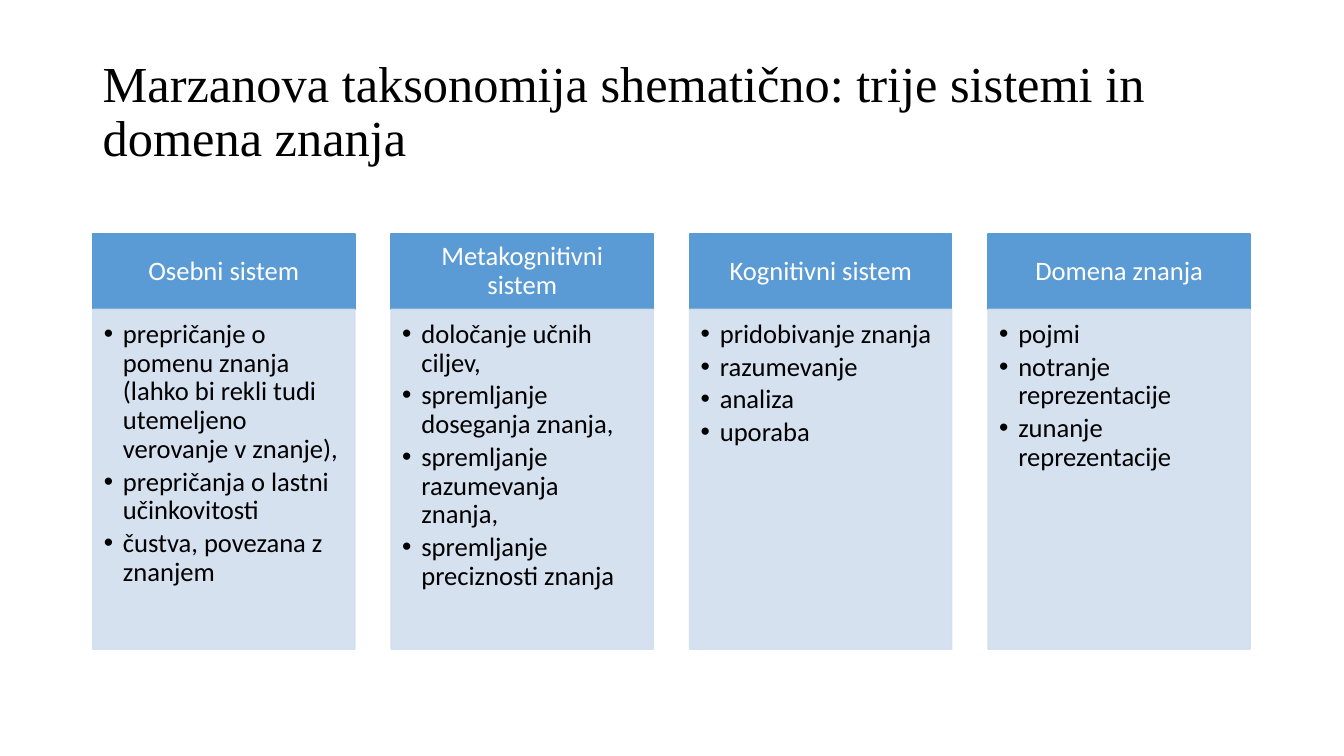
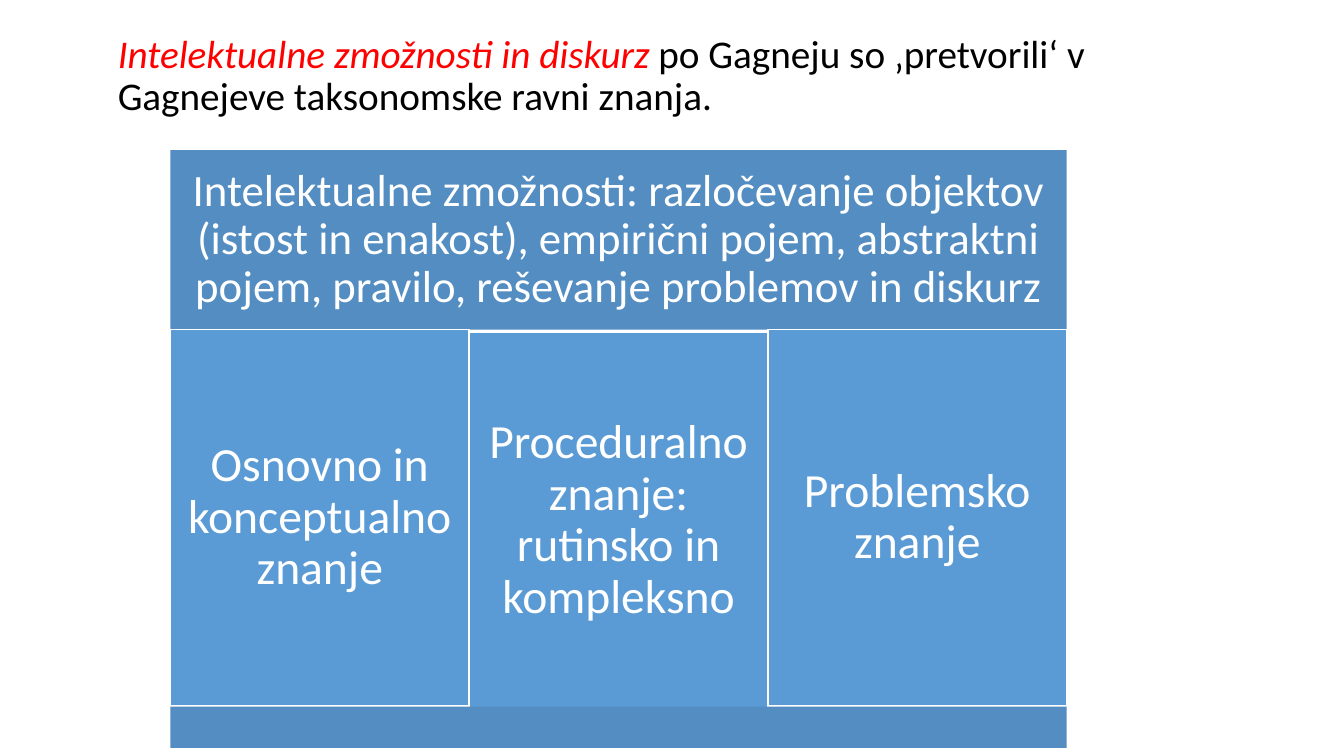
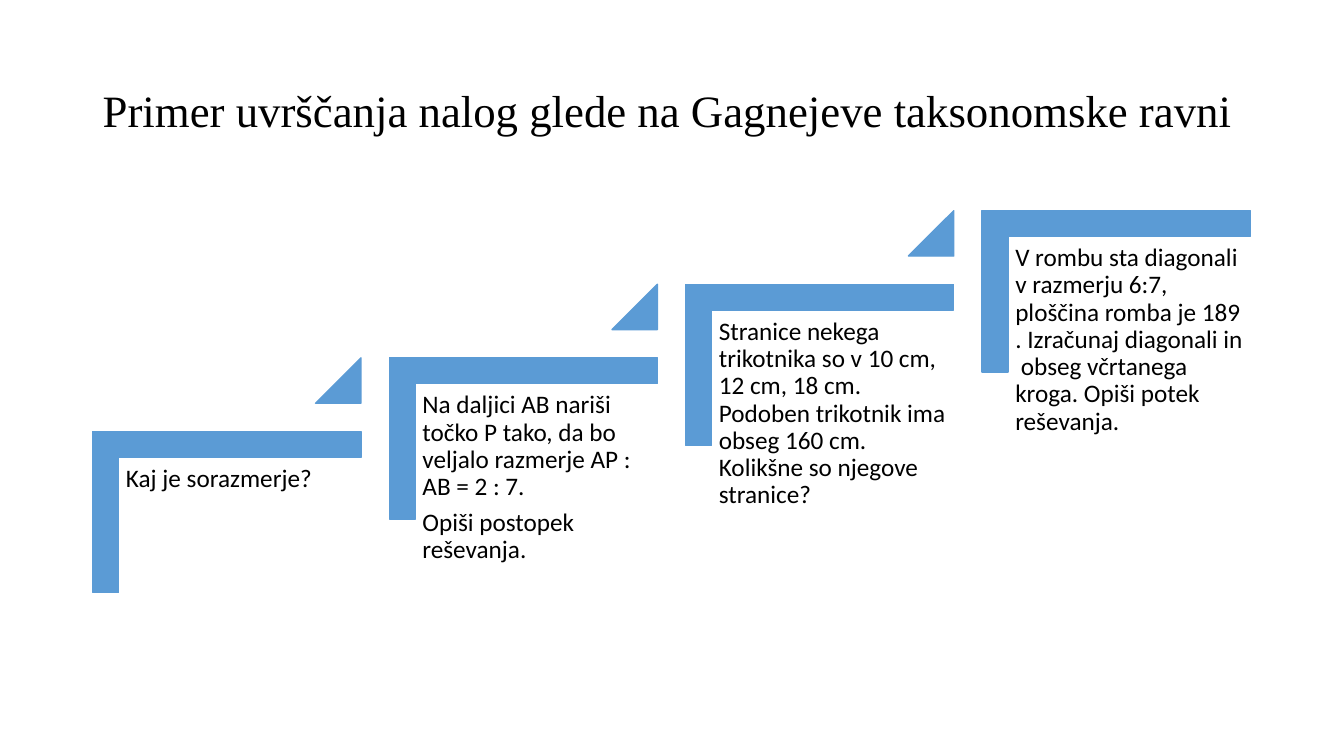
from lxml.etree import SubElement
from pptx import Presentation
from pptx.dml.color import RGBColor
from pptx.enum.shapes import MSO_SHAPE
from pptx.enum.text import MSO_ANCHOR, PP_ALIGN
from pptx.oxml.ns import qn
from pptx.util import Inches, Pt

BLUE, DARK_BLUE, PALE_BLUE = "5B9BD5", "538DC1", "D2DEEF"
WHITE, BLACK, RED = "FFFFFF", "000000", "FF0000"
BODY_FONT, TITLE_FONT = "Calibri", "Times New Roman"
LEFT = 0.92
CONTENT_WIDTH = 11.5

SYSTEMS = [
    ("Osebni sistem", [
        "prepričanje o pomenu znanja (lahko bi rekli tudi utemeljeno verovanje v znanje),",
        "prepričanja o lastni učinkovitosti",
        "čustva, povezana z znanjem"]),
    ("Metakognitivni sistem", [
        "določanje učnih ciljev,",
        "spremljanje doseganja znanja,",
        "spremljanje razumevanja znanja,",
        "spremljanje preciznosti znanja"]),
    ("Kognitivni sistem", ["pridobivanje znanja", "razumevanje", "analiza", "uporaba"]),
    ("Domena znanja", ["pojmi", "notranje reprezentacije", "zunanje reprezentacije"]),
]
ABILITIES = ("Intelektualne zmožnosti: razločevanje objektov (istost in enakost), "
             "empirični pojem, abstraktni pojem, pravilo, reševanje problemov in diskurz")
KNOWLEDGE = [
    ("Osnovno in konceptualno znanje", 3.27),
    ("Proceduralno znanje: rutinsko in kompleksno", 3.3),
    ("Problemsko znanje", 3.27),
]
TASKS = [
    ["Kaj je sorazmerje?"],
    ["Na daljici AB nariši točko P tako, da bo veljalo razmerje AP : AB = 2 : 7.",
     "Opiši postopek reševanja."],
    ["Stranice nekega trikotnika so v 10 cm, 12 cm, 18 cm. Podoben trikotnik ima "
     "obseg 160 cm. Kolikšne so njegove stranice?"],
    ["V rombu sta diagonali v razmerju 6:7, ploščina romba je 189 . Izračunaj "
     "diagonali in  obseg včrtanega kroga. Opiši potek reševanja."],
]


def rgb(color):
    return RGBColor.from_string(color)


def apply(target, values):
    for attribute, value in values.items():
        setattr(target, attribute, value)


def add_alpha(fill_owner, percent):
    """Make every solid colour below the element partly transparent."""
    for color in fill_owner.iter(qn("a:srgbClr")):
        SubElement(color, qn("a:alpha"), val=str(percent * 1000))


def add_bullet(paragraph, indent):
    properties = paragraph._p.get_or_add_pPr()
    properties.set("marL", str(Inches(indent)))
    properties.set("indent", str(-Inches(indent)))
    SubElement(properties, qn("a:buFont"), typeface="Arial")
    SubElement(properties, qn("a:buChar"), char="•")


def write(shape, paragraphs, size, color=BLACK, font=BODY_FONT, align=PP_ALIGN.LEFT,
          anchor=MSO_ANCHOR.TOP, insets=(0.1, 0.05, 0.1, 0.05), after=0, bullet=0):
    """Fill the shape with paragraphs, each a string or a list of (text, format) runs."""
    frame = shape.text_frame
    left, top, right, bottom = map(Inches, insets)
    apply(frame, {"word_wrap": True, "vertical_anchor": anchor,
                  "margin_left": left, "margin_top": top,
                  "margin_right": right, "margin_bottom": bottom})
    for index, content in enumerate(paragraphs):
        paragraph = frame.paragraphs[0] if index == 0 else frame.add_paragraph()
        apply(paragraph, {"alignment": align, "line_spacing": 0.9, "space_after": Pt(after)})
        if bullet:
            add_bullet(paragraph, bullet)
        runs = [(content, {})] if isinstance(content, str) else content
        for text, changes in runs:
            values = {"color": color, "italic": False} | changes
            run = paragraph.add_run()
            run.text = text
            run.font.color.rgb = rgb(values.pop("color"))
            apply(run.font, {"name": font, "size": Pt(size)} | values)


def add_text(slide, box, paragraphs, size, **style):
    write(slide.shapes.add_textbox(*map(Inches, box)), paragraphs, size, **style)


def add_title(slide, text, size):
    add_text(slide, (LEFT, 0.4, CONTENT_WIDTH, 1.45), [text], size,
             font=TITLE_FONT, anchor=MSO_ANCHOR.MIDDLE)


def add_block(slide, box, fill, line=None, kind=MSO_SHAPE.RECTANGLE, adjustments=()):
    block = slide.shapes.add_shape(kind, *map(Inches, box))
    block.shadow.inherit = False
    block.fill.solid()
    block.fill.fore_color.rgb = rgb(fill)
    if line:
        block.line.color.rgb = rgb(line)
        block.line.width = Pt(1)
    else:
        block.line.fill.background()
    for index, value in enumerate(adjustments):
        block.adjustments[index] = value
    return block


def add_label(slide, box, text, size, fill, line, insets):
    write(add_block(slide, box, fill, line), [text], size, color=WHITE,
          align=PP_ALIGN.CENTER, anchor=MSO_ANCHOR.MIDDLE, insets=insets)


def add_system(slide, left, heading, points):
    width, top, heading_height = 2.6, 2.32, 0.75
    add_label(slide, (left, top, width, heading_height), heading, 19, BLUE, BLUE,
              (0.15, 0.08, 0.15, 0.08))
    panel = add_block(slide, (left, top + heading_height, width, 3.37), PALE_BLUE, PALE_BLUE)
    add_alpha(panel._element.spPr, 90)
    write(panel, points, 19, insets=(0.11, 0.11, 0.15, 0.17), after=2.85, bullet=0.19)


def add_step(slide, left, top, task, leads_on):
    """Draw one stair with its task, and a triangle if another stair follows."""
    length, depth = 2.66, 1.6
    corner = add_block(slide, (left + (length - depth) / 2, top - (length - depth) / 2,
                               depth, length),
                       BLUE, BLUE, MSO_SHAPE.CORNER, (0.161, 0.161))
    corner.rotation = 90
    add_text(slide, (left + 0.26, top + 0.27, 2.4, 2.11), task, 18,
             insets=(0.07,) * 4, after=6.3)
    if leads_on:
        add_block(slide, (left + 2.21, top - 0.73, 0.45, 0.45), BLUE, BLUE,
                  MSO_SHAPE.ISOSCELES_TRIANGLE, (1,))


def build_systems(slide):
    add_title(slide, "Marzanova taksonomija shematično: trije sistemi in domena znanja", 36)
    for column, (heading, points) in enumerate(SYSTEMS):
        add_system(slide, LEFT + column * 2.96, heading, points)


def build_knowledge(slide):
    add_text(slide, (1.07, 0.29, CONTENT_WIDTH, 4.76), [[
        ("Intelektualne zmožnosti in diskurz ", {"color": RED, "italic": True}),
        ("po Gagneju so ‚pretvorili‘ v Gagnejeve taksonomske ravni znanja.", {}),
    ]], 28)
    left, width = 1.69, 8.89
    column_width = width / len(KNOWLEDGE)
    add_label(slide, (left, 1.49, width, 1.78), ABILITIES, 32, DARK_BLUE, None, (0.13,) * 4)
    for column, (text, top) in enumerate(KNOWLEDGE):
        add_label(slide, (left + column * column_width, top, column_width, 3.73),
                  text, 34, BLUE, WHITE, (0.14,) * 4)
    add_block(slide, (left, 7.01, width, 0.41), DARK_BLUE)


def build_tasks(slide):
    add_title(slide, "Primer uvrščanja nalog glede na Gagnejeve taksonomske ravni", 32)
    for step, task in enumerate(TASKS):
        add_step(slide, LEFT + step * 2.94, 4.28 - step * 0.73, task,
                 leads_on=step < len(TASKS) - 1)


def main():
    deck = Presentation()
    deck.slide_width, deck.slide_height = Inches(13.33), Inches(7.5)
    for build in (build_systems, build_knowledge, build_tasks):
        build(deck.slides.add_slide(deck.slide_layouts[6]))
    deck.save("out.pptx")


if __name__ == "__main__":
    main()
